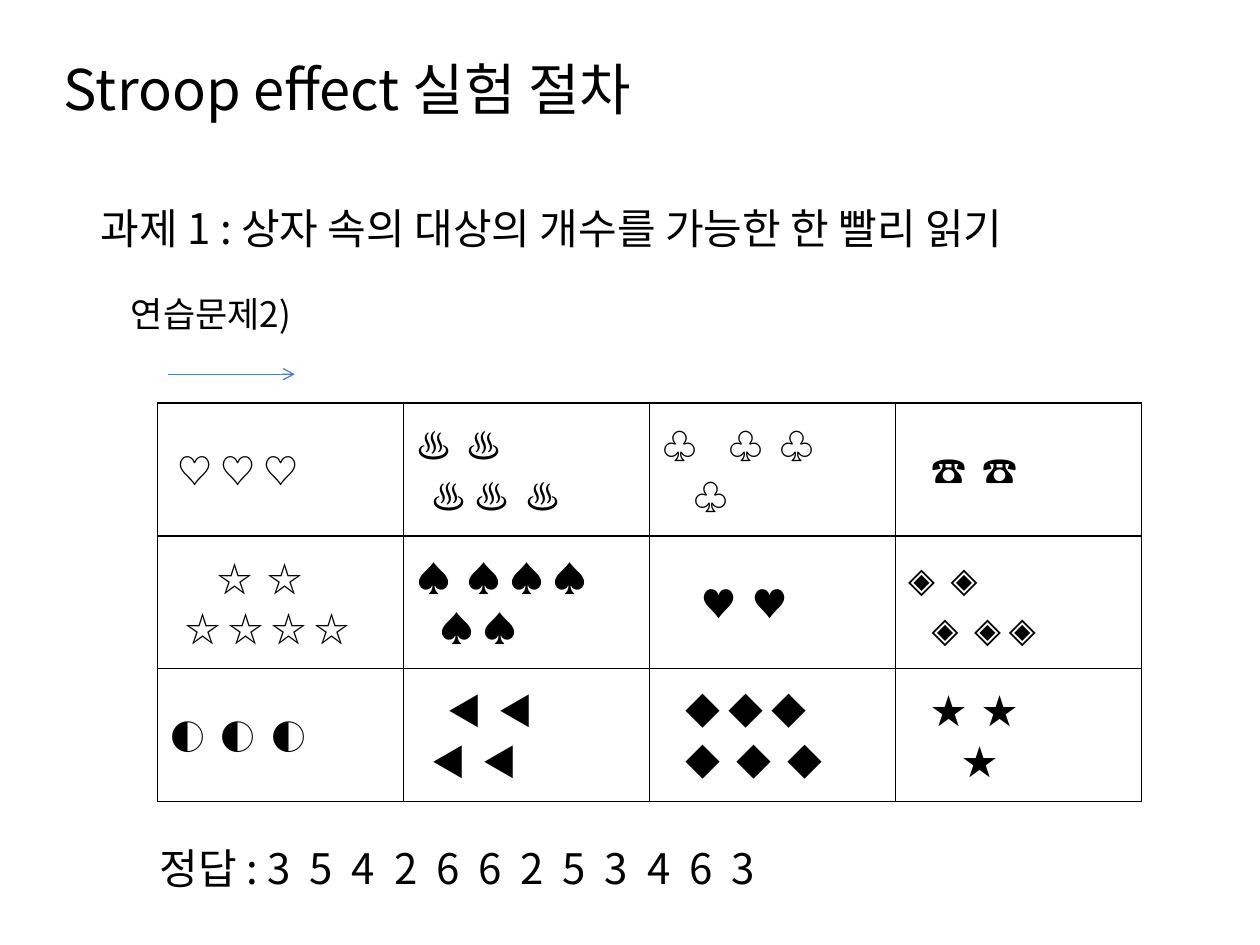
from dataclasses import dataclass
from typing import Sequence

import pptx
import pptx.dml.color
import pptx.enum.shapes
import pptx.enum.text
import pptx.oxml
import pptx.oxml.ns
import pptx.util

Inches = pptx.util.Inches
Pt = pptx.util.Pt


@dataclass(frozen=True)
class Theme:
    font: str = "Noto Sans CJK KR"
    ink: str = "000000"
    arrow: str = "4B7EBC"
    title: float = 32
    body: float = 24
    small: float = 20
    border: float = 1
    arrow_width: float = 0.75
    space_em: float = 0.224  # width of one space in the font


@dataclass(frozen=True)
class Label:
    left: float
    top: float
    width: float
    height: float
    size: float
    words: Sequence[str]
    gaps: Sequence[int] = ()


@dataclass(frozen=True)
class Row:
    """Symbols in a line: indent and gaps are counted in spaces."""
    symbol: str
    indent: int
    gaps: Sequence[int] = ()


THEME = Theme()

LABELS = [
    Label(0.41, 0.38, 4.94, 0.64, THEME.title, ["Stroop effect 실험 절차"]),
    Label(0.7, 1.56, 8.39, 0.5, THEME.body,
          ["과제 1 : 상자 속의 대상의 개수를 가능한 한 빨리 읽기"]),
    Label(0.94, 2.27, 1.66, 0.44, THEME.small, ["연습문제2)"]),
    Label(1.17, 6.64, 6.04, 0.5, THEME.body,
          ["정답 : 3", *"54266253463"], [2] * 11),
]

GRID = [
    [[Row("♡", 1, (1, 1))],
     [Row("♨", 0, (2,)), Row("♨", 2, (1, 2))],
     [Row("♧", 0, (4, 2)), Row("♧", 4)],
     [Row("☎", 3, (2,))]],
    [[Row("☆", 6, (2,)), Row("☆", 2, (1, 1, 1))],
     [Row("♠", 0, (2, 1, 1)), Row("♠", 3, (1,))],
     [Row("♥", 5, (2,))],
     [Row("◈", 0, (2,)), Row("◈", 3, (2, 1))]],
    [[Row("◐", 0, (2, 2))],
     [Row("◀", 4, (2,)), Row("◀", 2, (2,))],
     [Row("◆", 3, (1, 1)), Row("◆", 3, (2, 2))],
     [Row("★", 3, (2,)), Row("★", 7)]],
]


def add_span(para, text: str, size: float, extra_spaces: int = 0) -> None:
    span = para.add_run()
    span.text = text
    formats = {"size": Pt(size), "name": THEME.font, "bold": False}
    for name, value in formats.items():
        setattr(span.font, name, value)
    span.font.color.rgb = pptx.dml.color.RGBColor.from_string(THEME.ink)
    properties = span._r.get_or_add_rPr()
    for script in ("a:ea", "a:sym"):
        face = properties.makeelement(pptx.oxml.ns.qn(script), {"typeface": THEME.font})
        properties.append(face)
    if extra_spaces:
        properties.set("spc", str(round(extra_spaces * THEME.space_em * size * 100)))


def add_spaced(para, words: Sequence[str], gaps: Sequence[int], size: float) -> None:
    """Write words apart; wide gaps are single spaces with letter spacing."""
    add_span(para, words[0], size)
    for gap, word in zip(gaps, words[1:]):
        add_span(para, " ", size, gap - 1)
        add_span(para, word, size)


def add_label(page, label: Label) -> None:
    box = page.shapes.add_textbox(Inches(label.left), Inches(label.top),
                                  Inches(label.width), Inches(label.height))
    box.text_frame.word_wrap = False
    box.text_frame.auto_size = pptx.enum.text.MSO_AUTO_SIZE.SHAPE_TO_FIT_TEXT
    add_spaced(box.text_frame.paragraphs[0], label.words, label.gaps, label.size)


def add_borders(cell) -> None:
    properties = cell._tc.get_or_add_tcPr()
    for position, side in enumerate(("lnL", "lnR", "lnT", "lnB")):
        properties.insert(position, pptx.oxml.parse_xml(
            f'<a:{side} {pptx.oxml.ns.nsdecls("a")} w="{Pt(THEME.border)}">'
            f'<a:solidFill><a:srgbClr val="{THEME.ink}"/></a:solidFill></a:{side}>'))


def fill_cell(cell, rows: Sequence[Row]) -> None:
    cell.fill.background()
    cell.vertical_anchor = pptx.enum.text.MSO_ANCHOR.MIDDLE
    add_borders(cell)
    frame = cell.text_frame
    for index, row in enumerate(rows):
        para = frame.add_paragraph() if index else frame.paragraphs[0]
        margin = Pt(row.indent * THEME.space_em * THEME.small)
        para._p.get_or_add_pPr().set("marL", str(margin))
        add_spaced(para, [row.symbol] * (len(row.gaps) + 1), row.gaps, THEME.small)


def add_grid(page, left: float, top: float, width: float, height: float) -> None:
    table = page.shapes.add_table(len(GRID), len(GRID[0]), Inches(left), Inches(top),
                                  Inches(width), Inches(height)).table
    table.first_row = table.horz_banding = False
    for row_index, cells in enumerate(GRID):
        for column_index, rows in enumerate(cells):
            fill_cell(table.cell(row_index, column_index), rows)


def add_arrow(page, start: float, end: float, y: float) -> None:
    arrow = page.shapes.add_connector(pptx.enum.shapes.MSO_CONNECTOR.STRAIGHT,
                                      Inches(start), Inches(y), Inches(end), Inches(y))
    arrow.line.color.rgb = pptx.dml.color.RGBColor.from_string(THEME.arrow)
    arrow.line.width = Pt(THEME.arrow_width)
    namespace = pptx.oxml.ns.nsdecls("a")
    arrow.line._get_or_add_ln().append(
        pptx.oxml.parse_xml(f'<a:tailEnd {namespace} type="arrow"/>'))
    arrow._element.spPr.append(pptx.oxml.parse_xml(f"<a:effectLst {namespace}/>"))


def main() -> None:
    deck = pptx.Presentation()
    deck.slide_width, deck.slide_height = Inches(10), Inches(7.5)
    page = deck.slides.add_slide(deck.slide_layouts[6])

    # Symbol boxes and reading direction
    add_grid(page, 1.25, 3.2, 7.81, 3.16)
    add_arrow(page, 1.33, 2.34, 2.97)

    # Title, task, exercise and answers
    for label in LABELS:
        add_label(page, label)

    deck.save("out.pptx")


if __name__ == "__main__":
    main()
